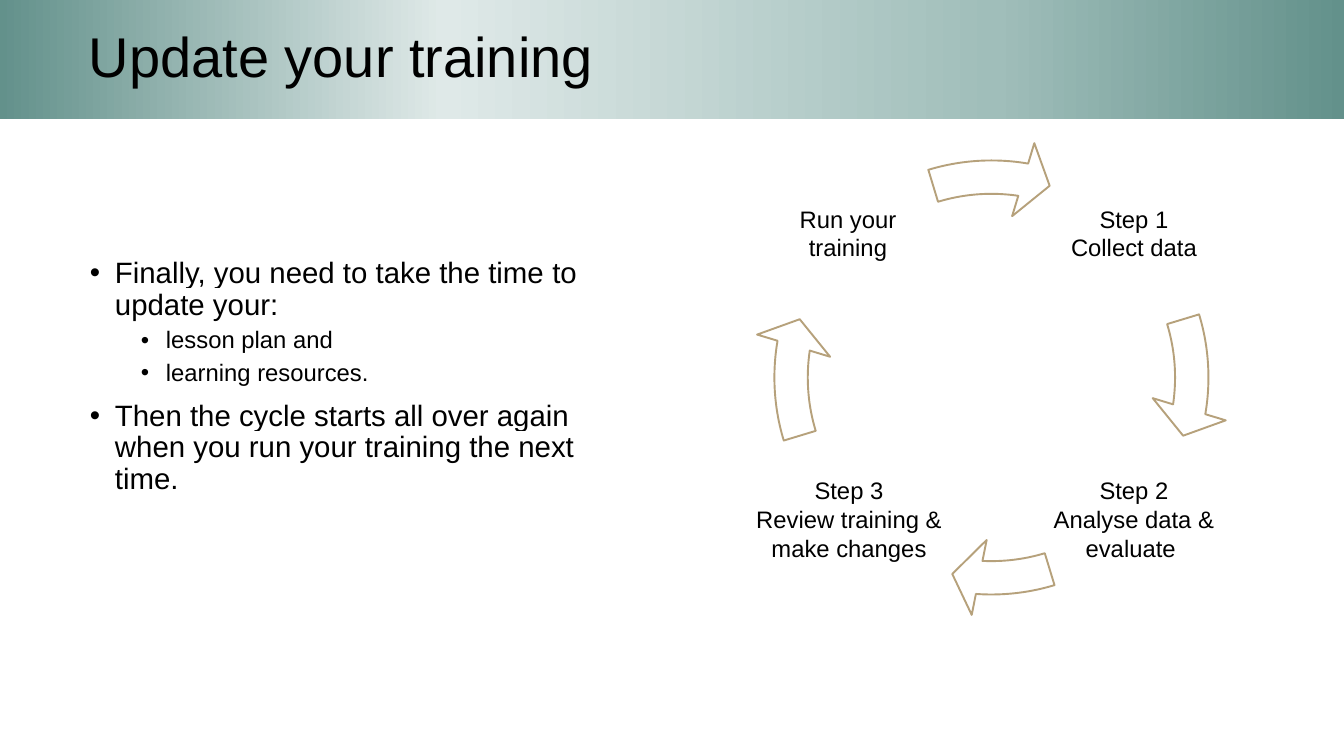
import pptx
import pptx.util
import pptx.dml.color
import pptx.enum.shapes
import pptx.enum.text
import pptx.oxml
import pptx.oxml.ns
import lxml.etree

PX = 914400 / 100.8
FONT = "Arial"
BLACK = pptx.dml.color.RGBColor(0x00, 0x00, 0x00)
WHITE = pptx.dml.color.RGBColor(0xFF, 0xFF, 0xFF)
TAN = pptx.dml.color.RGBColor(0xB6, 0xA1, 0x7B)
TEAL = pptx.dml.color.RGBColor(0x63, 0x91, 0x8B)
PALE_TEAL = pptx.dml.color.RGBColor(0xDF, 0xE9, 0xE8)
SOFT_TEAL = pptx.dml.color.RGBColor(0xA0, 0xBE, 0xBA)

BANNER_STOPS = [(0, TEAL), (33, PALE_TEAL), (74, SOFT_TEAL), (100, TEAL)]
BULLETS = [
    (0, [("Finally, you need to take the time ", False), ("to update your:", True)]),
    (1, [("lesson plan and", True)]),
    (1, [("learning resources.", True)]),
    (0, [("Then the cycle starts all over again when you run your training the next time.", True)]),
]
BULLET_STYLES = [(25, 21, 10), (76, 17, 5)]
STEPS = [
    (1050, 149, 168, ["Step 1", "Collect data"]),
    (1050, 435, 168, ["Step 2", "Analyse data & evaluate "]),
    (745, 435, 208, ["Step 3", "Review training & make changes"]),
    (764, 149, 168, ["Run your training"]),
]
ARROW_ENDS = [5.48, 56.1, 113.48, 167.48]
FULL_TURN = 216
QUARTER_TURN = FULL_TURN / 4
FIRST_ARROW_START = 205.86


def px(length):
    return pptx.util.Emu(round(length * PX))


def add_child(parent, tag, **attributes):
    return lxml.etree.SubElement(parent, pptx.oxml.ns.qn(tag), attributes)


def add_run(paragraph, text, size, highlighted=False):
    run = paragraph.add_run()
    run.text = text
    run.font.size = pptx.util.Pt(size)
    run.font.color.rgb = BLACK
    if highlighted:
        highlight = add_child(run.font._element, "a:highlight")
        add_child(highlight, "a:srgbClr", val=str(WHITE))
    run.font.name = FONT


def set_indent(paragraph, left, first_line):
    properties = paragraph._p.get_or_add_pPr()
    properties.set("marL", str(px(left)))
    properties.set("indent", str(px(first_line)))
    return properties


def prepare_frame(shape):
    frame = shape.text_frame
    frame.word_wrap = True
    frame.vertical_anchor = pptx.enum.text.MSO_ANCHOR.MIDDLE
    return frame


def add_text_box(slide, left, top, width, height):
    return prepare_frame(slide.shapes.add_textbox(px(left), px(top), px(width), px(height)))


def add_banner(slide, text):
    banner = slide.shapes.add_shape(
        pptx.enum.shapes.MSO_SHAPE.RECTANGLE, 0, 0, px(1344), px(119))
    banner.shadow.inherit = False
    banner.line.fill.background()
    banner.fill.gradient()
    banner.fill.gradient_angle = 0
    stops = banner._element.spPr.find(".//" + pptx.oxml.ns.qn("a:gsLst"))
    for stop in list(stops):
        stops.remove(stop)
    for position, color in BANNER_STOPS:
        stop = add_child(stops, "a:gs", pos=str(position * 1000))
        add_child(stop, "a:srgbClr", val=str(color))
    paragraph = prepare_frame(banner).paragraphs[0]
    paragraph.alignment = pptx.enum.text.PP_ALIGN.LEFT
    paragraph.line_spacing = 0.9
    set_indent(paragraph, 79, 0)
    add_run(paragraph, text, 40)


def add_bullets(slide):
    frame = add_text_box(slide, 80, 139, 555, 476)
    for index, (level, runs) in enumerate(BULLETS):
        left, size, space_before = BULLET_STYLES[level]
        paragraph = frame.add_paragraph() if index else frame.paragraphs[0]
        paragraph.level = level
        properties = set_indent(paragraph, left, -25)
        add_child(properties, "a:buFont", typeface=FONT)
        add_child(properties, "a:buChar", char="•")
        paragraph.line_spacing = 0.9
        if index:
            paragraph.space_before = pptx.util.Pt(space_before)
        for text, highlighted in runs:
            add_run(paragraph, text, size, highlighted)


def add_step(slide, left, top, width, lines):
    frame = add_text_box(slide, left, top, width, 168)
    frame.margin_left = frame.margin_right = px(2)
    frame.margin_top = frame.margin_bottom = px(2)
    paragraph = frame.paragraphs[0]
    paragraph.alignment = pptx.enum.text.PP_ALIGN.CENTER
    paragraph.space_after = pptx.util.Pt(6)
    for index, line in enumerate(lines):
        if index:
            paragraph.add_line_break()
        add_run(paragraph, line, 17)


def add_cycle_arrow(slide, start, end):
    arrow = slide.shapes.add_shape(
        pptx.enum.shapes.MSO_SHAPE.CIRCULAR_ARROW, px(753), px(139), px(477), px(477))
    arrow.shadow.inherit = False
    for index, value in enumerate([0.07, 4.66, end, start, 0.08]):
        arrow.adjustments[index] = value
    arrow.fill.solid()
    arrow.fill.fore_color.rgb = WHITE
    arrow.line.color.rgb = TAN
    arrow.line.width = pptx.util.Pt(1.35)


def main():
    presentation = pptx.Presentation()
    presentation.slide_width = px(1344)
    presentation.slide_height = px(756)
    slide = presentation.slides.add_slide(presentation.slide_layouts[6])
    add_banner(slide, "Update your training")
    add_bullets(slide)
    for index, (step, end) in enumerate(zip(STEPS, ARROW_ENDS)):
        add_step(slide, *step)
        add_cycle_arrow(slide, (FIRST_ARROW_START + index * QUARTER_TURN) % FULL_TURN, end)
    presentation.save("out.pptx")


if __name__ == "__main__":
    main()
